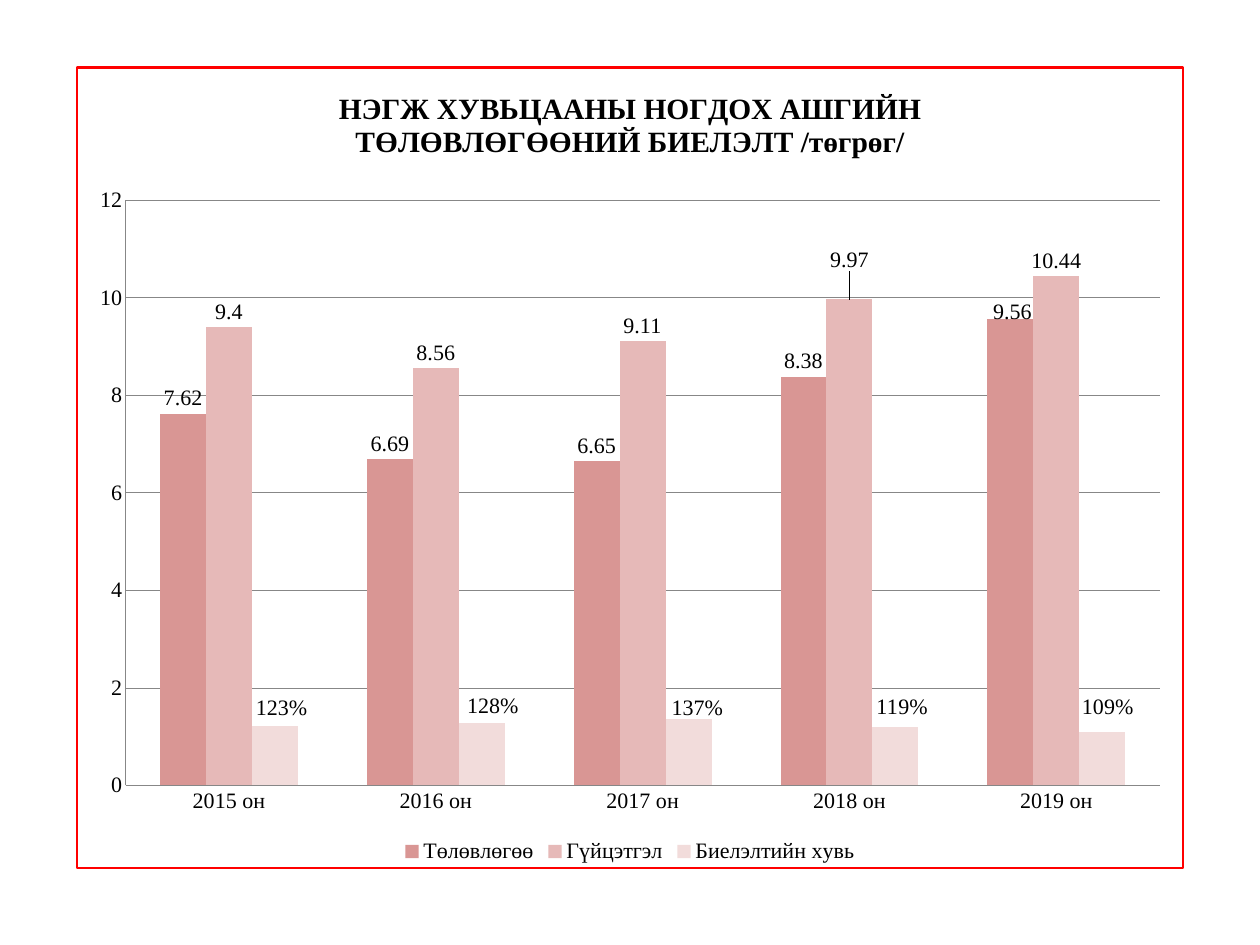
from lxml.etree import SubElement
from pptx import Presentation
from pptx.chart.data import CategoryChartData
from pptx.dml.color import RGBColor
from pptx.enum.chart import XL_CHART_TYPE, XL_LABEL_POSITION, XL_LEGEND_POSITION, XL_TICK_MARK
from pptx.oxml import parse_xml
from pptx.oxml.ns import nsdecls, qn
from pptx.util import Inches, Pt

BLACK = RGBColor(0x00, 0x00, 0x00)
RED = RGBColor(0xFF, 0x00, 0x00)
GRAY = RGBColor(0x87, 0x87, 0x87)
FACE = "Times New Roman"
WIDE, HIGH = Inches(14.22), Inches(10.67)

YEARS = [f"{year} он" for year in range(2015, 2020)]
TITLE = ["НЭГЖ ХУВЬЦААНЫ НОГДОХ АШГИЙН", "ТӨЛӨВЛӨГӨӨНИЙ БИЕЛЭЛТ /төгрөг/"]
SERIES = [
    ("Төлөвлөгөө", [7.62, 6.69, 6.65, 8.38, 9.56], "General",
     RGBColor(0xD9, 0x96, 0x94), {4: (0.002, 0.01)}),
    ("Гүйцэтгэл", [9.4, 8.56, 9.11, 9.97, 10.44], "General",
     RGBColor(0xE6, 0xB9, 0xB8), {3: (0, -0.03)}),
    ("Биелэлтийн хувь", [1.23, 1.28, 1.37, 1.19, 1.09], "0%",
     RGBColor(0xF2, 0xDC, 0xDB),
     {0: (0.006, -0.002), 1: (0.01, -0.002), 2: (0.008, 0.006),
      3: (0.006, -0.006), 4: (0.005, -0.012)}),
]


def set_font(font, size, bold=False):
    font.name = FACE
    font.size = Pt(size)
    font.bold = bold
    font.color.rgb = BLACK


def make_layout(**parts):
    layout = parse_xml(f"<c:layout {nsdecls('c')}><c:manualLayout/></c:layout>")
    for tag, value in parts.items():
        SubElement(layout[0], qn(f"c:{tag}")).set("val", str(value))
    return layout


def add_title(chart):
    frame = chart.chart_title.text_frame
    for row, line in enumerate(TITLE):
        para = frame.add_paragraph() if row else frame.paragraphs[0]
        run = para.add_run()
        run.text = line
        set_font(run.font, 24, True)
    chart.chart_title.include_in_layout = False


def style_axes(chart):
    for axis in (chart.category_axis, chart.value_axis):
        axis.major_tick_mark = axis.minor_tick_mark = XL_TICK_MARK.NONE
        axis.format.line.color.rgb = GRAY
        axis.format.line.width = Pt(0.75)
        set_font(axis.tick_labels.font, 18)
    value = chart.value_axis
    value.minimum_scale, value.maximum_scale, value.major_unit = 0, 12, 2
    value.has_major_gridlines = True
    value.major_gridlines.format.line.color.rgb = GRAY
    value.major_gridlines.format.line.width = Pt(0.75)


def style_bars(plot):
    plot.gap_width, plot.overlap = 150, 0
    plot.vary_by_categories = False
    for bars, (_, _, code, color, shifts) in zip(plot.series, SERIES):
        bars.format.fill.solid()
        bars.format.fill.fore_color.rgb = color
        bars.invert_if_negative = False
        labels = bars.data_labels
        labels.show_value = True
        labels.number_format = code
        labels.number_format_is_linked = False
        labels.position = XL_LABEL_POSITION.OUTSIDE_END
        set_font(labels.font, 18)
        for spot, (right, down) in shifts.items():
            label = bars.points[spot].data_label
            label.position = XL_LABEL_POSITION.OUTSIDE_END
            set_font(label.font, 18)
        for node in labels._element.findall(qn("c:dLbl")):
            index = node.find(qn("c:idx"))
            right, down = shifts[int(index.get("val"))]
            layout = make_layout(x=right, y=down)
            index.addnext(layout)
            layout.addnext(parse_xml(
                f'<c:numFmt {nsdecls("c")} formatCode="{code}" sourceLinked="0"/>'))


def add_border(chart):
    root = chart._chartSpace.find(qn("c:chart"))
    root.addnext(parse_xml(
        f'<c:spPr {nsdecls("c", "a")}><a:noFill/><a:ln w="{Pt(2.25)}"><a:solidFill>'
        f'<a:srgbClr val="{RED}"/></a:solidFill></a:ln></c:spPr>'))


def place_plot(chart):
    area = chart._chartSpace.find(qn("c:chart")).find(qn("c:plotArea"))
    for old in area.findall(qn("c:layout")):
        area.remove(old)
    area.insert(0, make_layout(layoutTarget="inner", xMode="edge", yMode="edge",
                               x=0.044, y=0.166, w=0.935, h=0.731))


def add_profit(slide, left, top, width, height):
    data = CategoryChartData()
    data.categories = YEARS
    for name, values, code, _, _ in SERIES:
        data.add_series(name, values, code)
    chart = slide.shapes.add_chart(
        XL_CHART_TYPE.COLUMN_CLUSTERED, left, top, width, height, data).chart
    set_font(chart.font, 18)
    add_title(chart)
    chart.has_legend = True
    chart.legend.position = XL_LEGEND_POSITION.BOTTOM
    chart.legend.include_in_layout = False
    set_font(chart.legend.font, 18)
    style_axes(chart)
    style_bars(chart.plots[0])
    place_plot(chart)
    add_border(chart)


def main():
    deck = Presentation()
    deck.slide_width, deck.slide_height = WIDE, HIGH
    slide = deck.slides.add_slide(deck.slide_layouts[6])
    add_profit(slide, int(WIDE * 0.06), int(HIGH * 0.07),
               int(WIDE * 0.88), int(HIGH * 0.85))
    deck.save("out.pptx")


if __name__ == "__main__":
    main()
